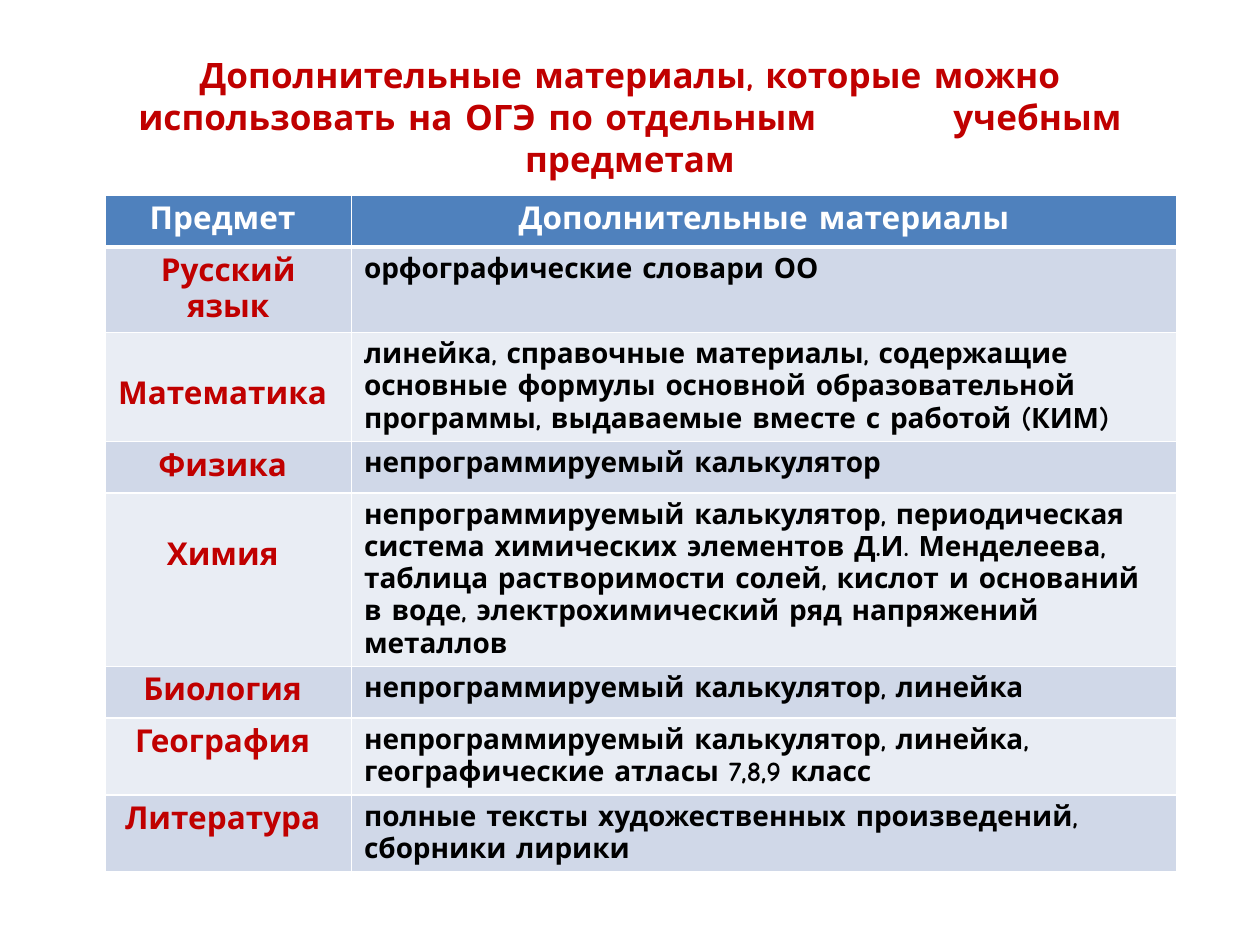
from dataclasses import dataclass

from lxml import etree
from pptx import Presentation
from pptx.dml.color import RGBColor
from pptx.enum.text import MSO_ANCHOR, PP_ALIGN
from pptx.oxml.ns import qn
from pptx.util import Pt

CENTER, LEFT = PP_ALIGN.CENTER, PP_ALIGN.LEFT
MIDDLE = MSO_ANCHOR.MIDDLE
TITLE_ONLY = 5


@dataclass(frozen=True)
class Theme:
    font: str = "Comic Neue"
    accent: str = "C00000"
    header: str = "4F81BD"
    bands: tuple = ("D0D8E8", "E9EDF4")
    light: str = "FFFFFF"
    dark: str = "000000"
    title_size: float = 20
    subject_size: float = 18
    material_size: float = 16


THEME = Theme()

TITLE_START = "Дополнительные материалы, которые можно использовать на ОГЭ по отдельным"
TITLE_END = "учебным предметам"
TITLE_GAP = 71  # extra width of the space between the two parts

HEADINGS = ("Предмет ", "Дополнительные материалы")
# Subject, materials, whether the subject sits one line lower
SUBJECTS = [
    ("Русский язык", "орфографические словари ОО", False),
    ("Математика ", "линейка, справочные материалы, содержащие основные формулы "
     "основной образовательной программы, выдаваемые вместе с работой (КИМ)", True),
    ("Физика ", "непрограммируемый калькулятор", False),
    ("Химия ", "непрограммируемый калькулятор, периодическая система химических "
     "элементов Д.И. Менделеева, таблица растворимости солей, кислот и оснований "
     "в воде, электрохимический ряд напряжений металлов", True),
    ("Биология ", "непрограммируемый калькулятор, линейка", False),
    ("География ", "непрограммируемый калькулятор, линейка, географические "
     "атласы 7,8,9 класс", False),
    ("Литература ", "полные тексты художественных произведений, сборники лирики", False),
]
SUBJECT_SHARE = 0.23
ROW_HEIGHT = 29.5
CELL_TOP = 3.6
LINE_DROP = 21.7


def style_font(font, size, color):
    font.name = THEME.font
    font.size = Pt(size)
    font.bold = True
    font.color.rgb = RGBColor.from_string(color)


def add_borders(cell, top=1, bottom=1):
    properties = cell._tc.get_or_add_tcPr()
    for tag, width in (("a:lnL", 1), ("a:lnR", 1), ("a:lnT", top), ("a:lnB", bottom)):
        line = etree.SubElement(properties, qn(tag), w=str(Pt(width)))
        fill = etree.SubElement(line, qn("a:solidFill"))
        etree.SubElement(fill, qn("a:srgbClr"), val=THEME.light)


def fill_cell(cell, text, size, color, background, alignment, **borders):
    add_borders(cell, **borders)
    cell.fill.solid()
    cell.fill.fore_color.rgb = RGBColor.from_string(background)
    cell.text_frame.text = text
    paragraph = cell.text_frame.paragraphs[0]
    paragraph.alignment = alignment
    style_font(paragraph.runs[0].font, size, color)


def place_title(slide, left, top, width, height):
    title = slide.shapes.title
    title.left, title.top, title.width, title.height = map(Pt, (left, top, width, height))
    title.text_frame.vertical_anchor = MIDDLE
    paragraph = title.text_frame.paragraphs[0]
    paragraph.alignment = CENTER
    for text in (TITLE_START, " ", TITLE_END):
        run = paragraph.add_run()
        run.text = text
        style_font(run.font, THEME.title_size, THEME.accent)
    # Widen the single space by character spacing
    paragraph.runs[1].font._element.set("spc", str(TITLE_GAP * 100))


def place_materials_table(slide, left, top, width, height):
    frame = slide.shapes.add_table(len(SUBJECTS) + 1, 2, *map(Pt, (left, top, width, height)))
    table = frame.table
    table.columns[0].width = Pt(width * SUBJECT_SHARE)
    table.columns[1].width = Pt(width * (1 - SUBJECT_SHARE))
    # Rows start equal and grow with their text
    for row in table.rows:
        row.height = Pt(ROW_HEIGHT)
    frame.height = Pt(height)

    # Header row
    for column, heading in enumerate(HEADINGS):
        fill_cell(table.cell(0, column), heading, THEME.subject_size, THEME.light,
                  THEME.header, CENTER, bottom=3)

    # Banded subject rows
    for row, (subject, materials, lowered) in enumerate(SUBJECTS, start=1):
        band = THEME.bands[(row - 1) % 2]
        top_border = 3 if row == 1 else 1
        subject_cell = table.cell(row, 0)
        fill_cell(subject_cell, subject, THEME.subject_size, THEME.accent,
                  band, CENTER, top=top_border)
        if lowered:
            subject_cell.margin_top = Pt(CELL_TOP + LINE_DROP)
        fill_cell(table.cell(row, 1), materials, THEME.material_size, THEME.dark,
                  band, LEFT, top=top_border)


def main():
    presentation = Presentation()
    presentation.slide_width, presentation.slide_height = Pt(720), Pt(540)
    slide = presentation.slides.add_slide(presentation.slide_layouts[TITLE_ONLY])
    place_title(slide, 36, 21.6, 648, 90)
    place_materials_table(slide, 60, 111.6, 612.5, 357)
    presentation.save("out.pptx")


if __name__ == "__main__":
    main()
